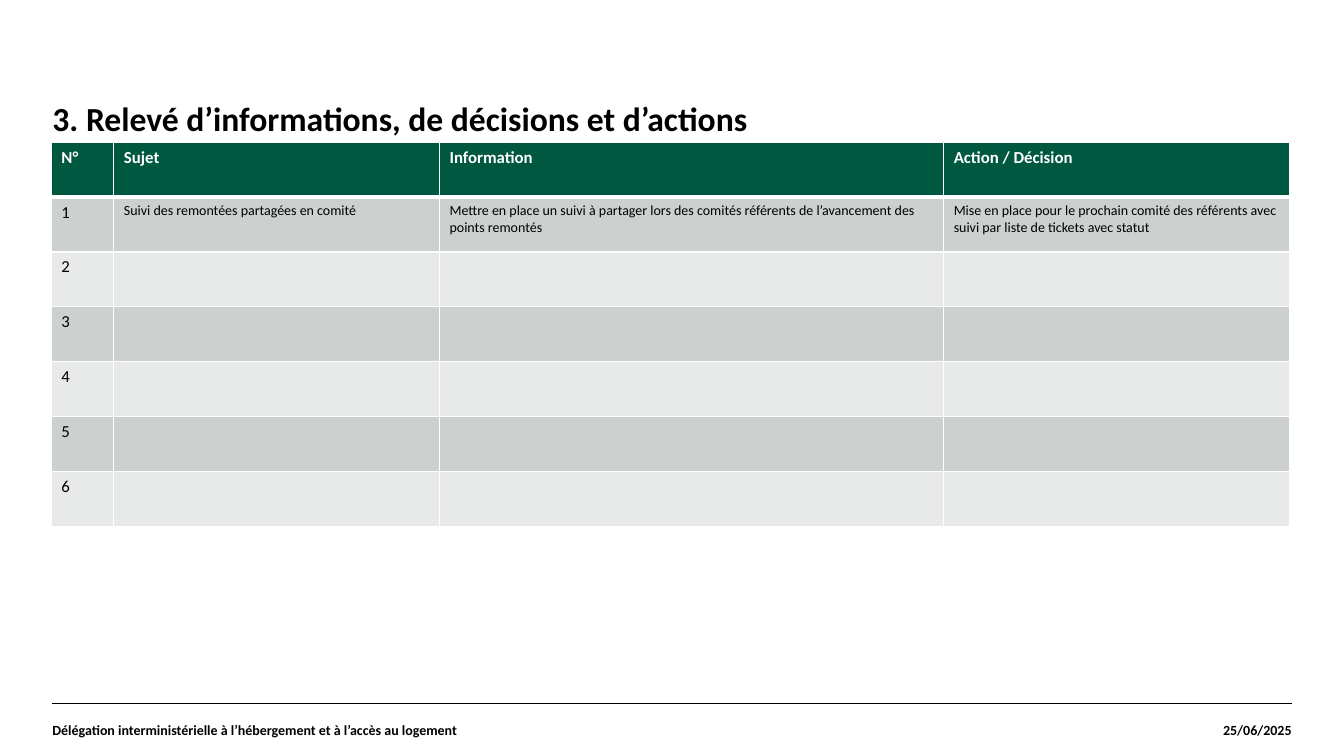
import pptx
import pptx.dml.color
import pptx.enum.shapes
import pptx.enum.text
import pptx.oxml.ns
import pptx.util
from lxml import etree

COLORS = {"ink": "000000", "paper": "FFFFFF", "header": "005841",
          "odd": "CCD1CF", "even": "E7EAE9"}
FONT = "Calibri"
ALIGN = pptx.enum.text.PP_ALIGN
ANCHOR = pptx.enum.text.MSO_ANCHOR


def rgb(name):
    return pptx.dml.color.RGBColor.from_string(COLORS[name])


def add_element(parent, tag, **attributes):
    return etree.SubElement(parent, pptx.oxml.ns.qn(tag), attributes)


class Page:
    """One slide laid out on a grid of square modules, ten to the inch."""

    def __init__(self, deck):
        self.slide = deck.slides.add_slide(deck.slide_layouts[6])

    def grid(self, *modules):
        return [pptx.util.Inches(count / 10) for count in modules]

    def add_run(self, paragraph, wording, size, color="ink", bold=False):
        run = paragraph.add_run()
        run.text = wording
        run.font.name = FONT
        run.font.size = pptx.util.Pt(size)
        run.font.bold = bold
        run.font.color.rgb = rgb(color)

    def text(self, box, wording, size, align=ALIGN.LEFT, anchor=ANCHOR.TOP, spacing=1.0):
        frame = self.slide.shapes.add_textbox(*self.grid(*box)).text_frame
        frame.word_wrap = True
        frame.vertical_anchor = anchor
        frame.margin_left = frame.margin_right = frame.margin_top = frame.margin_bottom = 0
        line = frame.paragraphs[0]
        line.alignment = align
        line.line_spacing = spacing
        self.add_run(line, wording, size, bold=True)

    def rule(self, start, end, width):
        rule = self.slide.shapes.add_connector(
            pptx.enum.shapes.MSO_CONNECTOR.STRAIGHT, *self.grid(*start, *end))
        rule.line.color.rgb = rgb("ink")
        rule.line.width = pptx.util.Pt(width)
        add_element(rule._element.spPr, "a:effectLst")

    def cell_borders(self, cell, **widths):
        properties = cell._tc.get_or_add_tcPr()
        for side, width in widths.items():
            border = add_element(properties, f"a:ln{side}", w=str(pptx.util.Pt(width)))
            fill = add_element(border, "a:solidFill")
            add_element(fill, "a:srgbClr", val=COLORS["paper"])

    def table(self, left, top, column_widths, row_height, records):
        box = (left, top, sum(column_widths), row_height * len(records))
        table = self.slide.shapes.add_table(
            len(records), len(column_widths), *self.grid(*box)).table
        for column, width in zip(table.columns, self.grid(*column_widths)):
            column.width = width
        for index, record in enumerate(records):
            table.rows[index].height = self.grid(row_height)[0]
            header = index == 0
            shade = "header" if header else "odd" if index % 2 else "even"
            for position, wording in enumerate(record):
                cell = table.cell(index, position)
                self.cell_borders(cell, L=1, R=1, T=3 if index == 1 else 1, B=3 if header else 1)
                cell.fill.solid()
                cell.fill.fore_color.rgb = rgb(shade)
                if wording:
                    self.add_run(cell.text_frame.paragraphs[0], wording,
                                 12 if header or position == 0 else 10,
                                 "paper" if header else "ink", header)


def main():
    deck = pptx.Presentation()
    deck.slide_width = pptx.util.Inches(13.33)
    deck.slide_height = pptx.util.Inches(7.5)
    page = Page(deck)

    left, right, footer_top, footer_height = 5.2, 128.1, 69.8, 5.2
    page.rule((left, footer_top), (right, footer_top), 0.8)
    page.text((left, 10.2, 122.8, 10.5),
              "3. Relevé d’informations, de décisions et d’actions", 24, spacing=0.9)
    date_width = 17.1
    page.text((right - date_width, footer_top, date_width, footer_height),
              "25/06/2025", 10, ALIGN.RIGHT, ANCHOR.MIDDLE)
    page.text((left, footer_top, 86.1, footer_height),
              "Délégation interministérielle à l’hébergement et à l’accès au logement",
              10, anchor=ANCHOR.MIDDLE)

    headings = ["N°", "Sujet", "Information", "Action / Décision"]
    first_topic = [
        "1",
        "Suivi des remontées partagées en comité",
        "Mettre en place un suivi à partager lors des comités référents "
        "de l’avancement des points remontés",
        "Mise en place pour le prochain comité des référents "
        "avec suivi par liste de tickets avec statut",
    ]
    open_topics = [[str(number), "", "", ""] for number in range(2, 7)]
    page.table(5.1, 14.1, (6.2, 32.3, 50, 34.3), 5.45,
               [headings, first_topic, *open_topics])
    deck.save("out.pptx")


if __name__ == "__main__":
    main()
